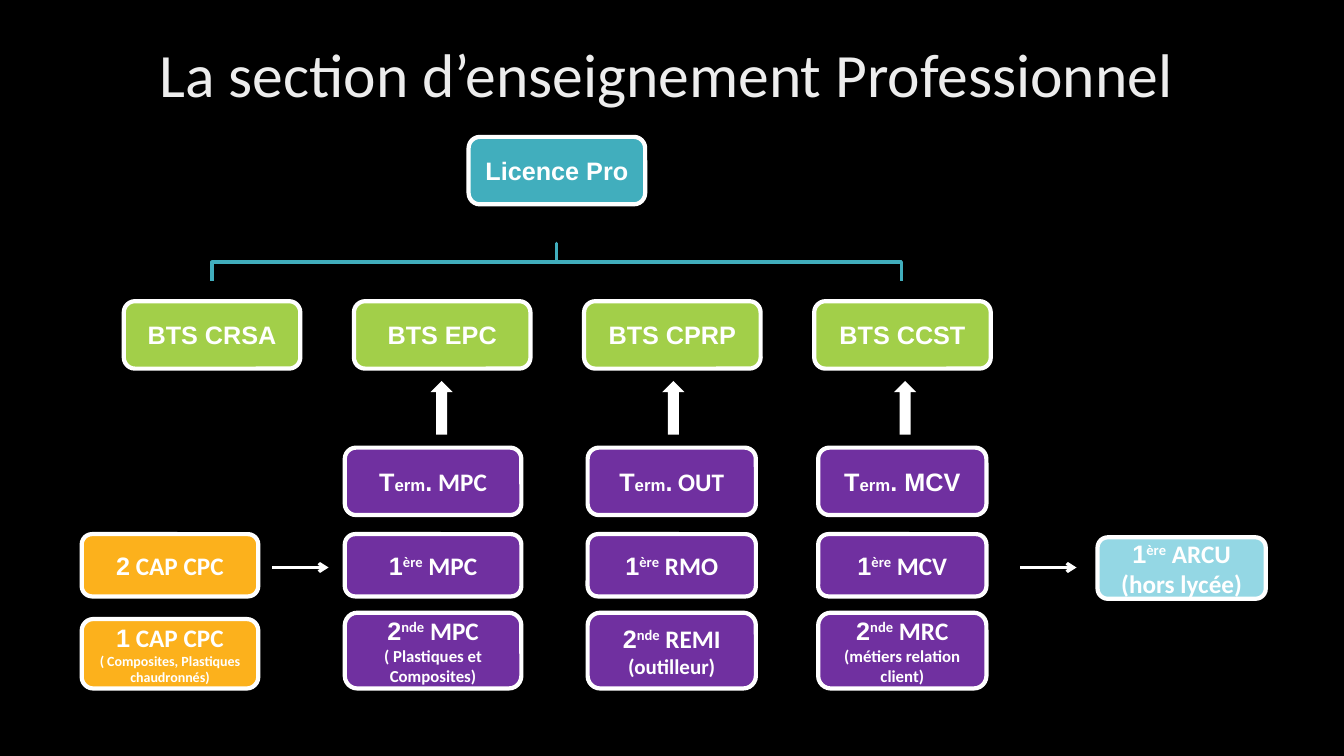
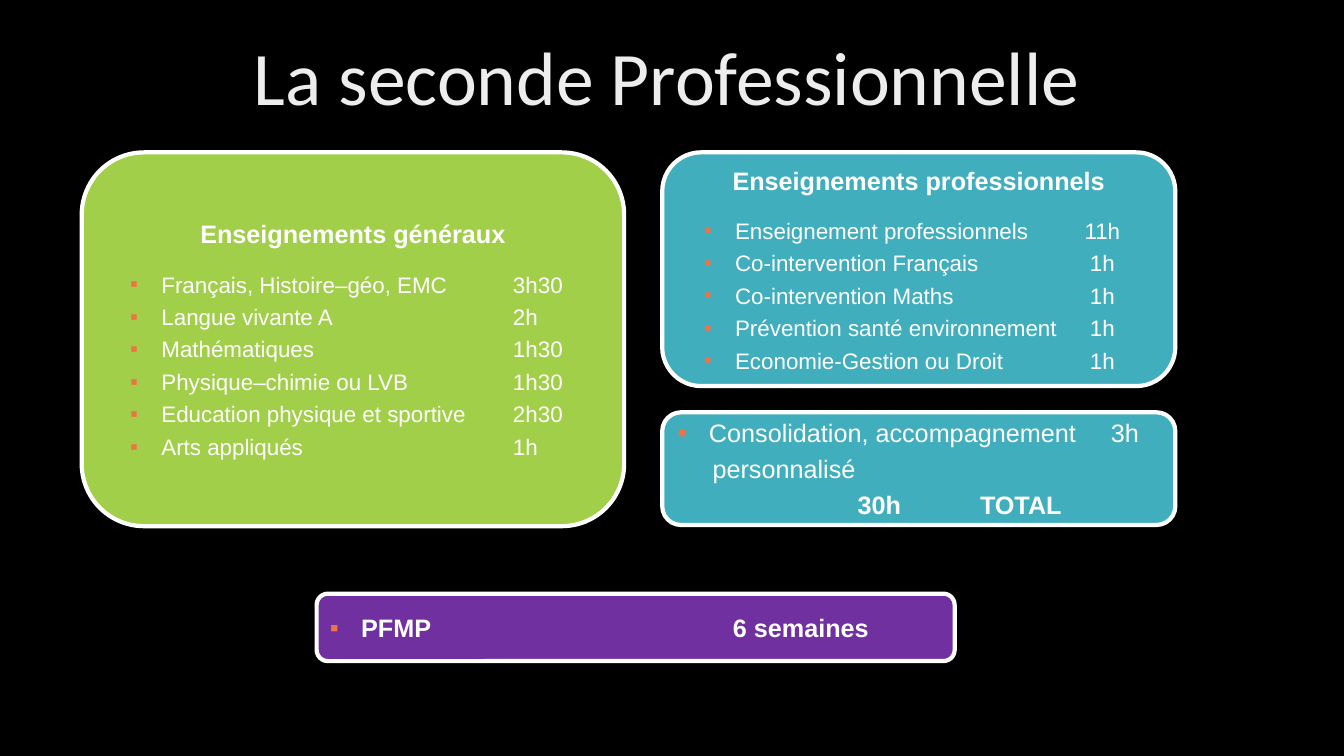
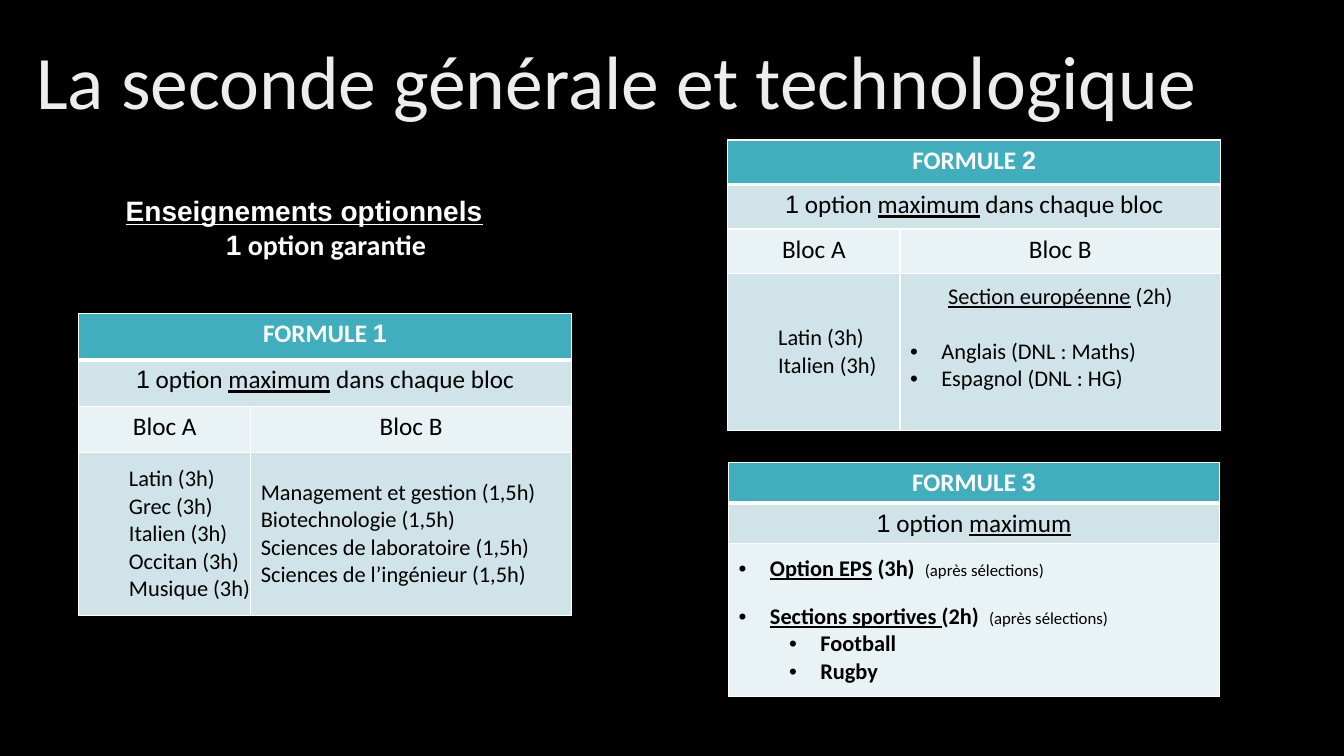
import pptx
import pptx.util
import pptx.dml.color
import pptx.enum.shapes
import pptx.enum.text
import pptx.oxml.ns
from lxml import etree

Cm, Pt = pptx.util.Cm, pptx.util.Pt
SHAPE = pptx.enum.shapes.MSO_SHAPE
ALIGN = pptx.enum.text.PP_ALIGN
MIDDLE = pptx.enum.text.MSO_ANCHOR.MIDDLE

INK = {
    "night": "000000", "white": "FFFFFF", "mist": "EDEDED",
    "violet": "7030A0", "amber": "FCB11C", "lime": "A2CF49",
    "teal": "41AEBD", "sky": "94D7E4", "coral": "EE7444",
    "band": "CFE3E8", "pale": "E9F2F4",
}
CAL = {"name": "Calibri"}
ARIAL = {"name": "Arial"}
SUPER = {"name": "Calibri", "base": "30000"}
SMALL = {"size": 12}
LINED = {"underline": True}
TITLE = {"name": "Calibri", "size": 54, "color": "mist"}
NODE = {"name": "Arial", "size": 18, "bold": True, "color": "white"}
HEAD = {"name": "Calibri", "size": 18, "bold": True, "color": "white"}
BODY = {"name": "Calibri", "size": 18, "bold": False, "color": "night"}
CELL = {**BODY, "size": 16}
TAB = 10.16


def tint(name):
    return pptx.dml.color.RGBColor.from_string(INK[name])


def add(root, tag, **attrs):
    return etree.SubElement(root, pptx.oxml.ns.qn("a:" + tag), attrs)


def place(box):
    return [Cm(side) for side in box]


def shift(box, x, y, w, h):
    return box[0] + x, box[1] + y, w, h


def para(*runs, **form):
    return runs, form


def dress(run, form):
    for key, value in form.items():
        if key == "color":
            run.font.color.rgb = tint(value)
        elif key == "base":
            run._r.get_or_add_rPr().set("baseline", value)
        else:
            setattr(run.font, key, Pt(value) if key == "size" else value)


def layout(item, align="left", left=0, hang=0, before=0, line=None,
           mark=None, hue=None, tab=None, snap="l"):
    props = item._p.get_or_add_pPr()
    props.set("marL", str(Cm(left)))
    props.set("indent", str(-Cm(hang)))
    if mark:
        if hue:
            add(add(props, "buClr"), "srgbClr", val=INK[hue])
        add(props, "buFont", typeface="Arial")
        add(props, "buChar", char=mark)
    if tab:
        add(add(props, "tabLst"), "tab", pos=str(Cm(tab)), algn=snap)
    values = {"alignment": getattr(ALIGN, align.upper()),
              "space_before": Pt(before), "line_spacing": line}
    for key, value in values.items():
        setattr(item, key, value)


def write(frame, paras, base):
    frame.word_wrap = True
    for i, (runs, form) in enumerate(paras):
        item = frame.add_paragraph() if i else frame.paragraphs[0]
        layout(item, **form)
        for run in runs:
            text, style = (run, {}) if isinstance(run, str) else run
            piece = item.add_run()
            piece.text = text
            dress(piece, {**base, **style})


def label(slide, box, paras, base):
    write(slide.shapes.add_textbox(*place(box)).text_frame, paras, base)


def title(slide, box, text, size=54, align="center"):
    label(slide, box, [para(text, align=align, line=0.9)], {**TITLE, "size": size})


def form(slide, kind, box, fill=None, edge=None, width=3):
    shape = slide.shapes.add_shape(kind, *place(box))
    shape.shadow.inherit = False
    if fill:
        shape.fill.solid()
        shape.fill.fore_color.rgb = tint(fill)
    else:
        shape.fill.background()
    if edge:
        shape.line.color.rgb = tint(edge)
        shape.line.width = Pt(width)
    else:
        shape.line.fill.background()
    return shape


def panel(slide, box, fill, paras, base=NODE):
    shape = form(slide, SHAPE.FLOWCHART_ALTERNATE_PROCESS, box, fill, "white")
    shape.text_frame.vertical_anchor = MIDDLE
    write(shape.text_frame, paras, base)


def node(slide, box, fill, *lines):
    panel(slide, box, fill, [para(*line, align="center") for line in lines])


def arrow(slide, x, y, size):
    line = slide.shapes.add_connector(
        pptx.enum.shapes.MSO_CONNECTOR.STRAIGHT, Cm(x), Cm(y), Cm(x + size), Cm(y))
    line.line.color.rgb = tint("white")
    line.line.width = Pt(2.25)
    add(line.line._get_or_add_ln(), "tailEnd", type="arrow")
    add(line._element.spPr, "effectLst")


def track(slide, box, term, first, second):
    x, y, w, h = box
    rows = [(0, 1.7, term), (2.18, 1.57, first), (4.16, 1.91, second)]
    for top, high, lines in rows:
        node(slide, shift(box, 0, top, w, high), "violet", *lines)


def summit(slide, box):
    node(slide, shift(box, 8.69, 0, 4.45, 1.7), "teal", ["Licence Pro"])
    brace = form(slide, SHAPE.RIGHT_BRACE, shift(box, 10.44, -5.53, 0.94, 17.37),
                 edge="teal", width=2.5)
    brace.adjustments[0] = 0
    brace.adjustments[1] = 0.5
    brace.rotation = 270
    for i, name in enumerate(["CRSA", "EPC", "CPRP", "CCST"]):
        node(slide, shift(box, 5.8 * i, 4.14, 4.45, 1.7), "lime", ["BTS " + name])
        if i:
            form(slide, SHAPE.UP_ARROW,
                 shift(box, 1.89 + 5.84 * i, 6.15, 0.56, 1.35), "white")


def base(slide, box):
    term = ["T", ("erm", SMALL), "."]
    first, second = ["1", ("ère", SUPER)], ["2", ("nde", SUPER)]
    tracks = [
        (6.63, 4.45, (" MPC", CAL), " MPC", " MPC", "( Plastiques et Composites)", 12),
        (12.75, 4.24, (" OUT", CAL), " RMO", " REMI", "(outilleur)", 15),
        (18.56, 4.24, " MCV", " MCV", " MRC", "(métiers relation client)", 12),
    ]
    for x, w, last, mid, low, note, size in tracks:
        track(slide, shift(box, x, 0, w, 6.07),
              [term + [last]],
              [first + [(mid, CAL)]],
              [second + [(low, CAL)], [(note, {**CAL, "size": size})]])
    cap = (" CAP CPC", CAL)
    node(slide, shift(box, 0, 2.18, 4.45, 1.57), "amber", ["2", cap])
    node(slide, shift(box, 0, 4.32, 4.45, 1.75), "amber", ["1", cap],
         [("( Composites, Plastiques chaudronnés)", {**CAL, "size": 10})])
    node(slide, shift(box, 25.6, 2.26, 4.24, 1.55), "sky",
         first + [(" ARCU", CAL)], [("(hors lycée)", CAL)])
    for x in (4.8, 23.65):
        arrow(slide, box[0] + x, box[1] + 3.02, 1.42)


def course(slide, box, fill, head, items, tab=TAB, snap="l"):
    plain = {"size": 16, "bold": False}
    paras = [para(head, align="center")]
    for i, (name, hours) in enumerate(items):
        paras.append(para((name + "\t" + hours, plain), left=1.3, hang=0.79,
                          before=4 if i else 15.5, mark="▪", hue="coral",
                          tab=tab, snap=snap))
    panel(slide, box, fill, paras)


def total(slide, box):
    plain = {"bold": False}
    panel(slide, box, "teal", [
        para(("Consolidation, accompagnement\t3h", plain), left=0.79, hang=0.79,
             mark="▪", hue="coral", tab=10.92),
        para(("personnalisé", plain), left=0.88, before=4.3),
        para("TOTAL\t30h", left=7.62, before=4.3, tab=TAB)])


def frame(cell, top, low):
    props = cell._tc.get_or_add_tcPr()
    for side, width in zip("LRTB", (1, 1, top, low)):
        edge = add(props, "ln" + side, w=str(Pt(width)))
        add(add(edge, "solidFill"), "srgbClr", val=INK["white"])


def grid(slide, box, cols, rows, cells):
    table = slide.shapes.add_table(len(rows), len(cols), *place(box)).table
    table.first_row = table.horz_banding = False
    for col, size in zip(table.columns, cols):
        col.width = Cm(size)
    for r, (high, fill, line) in enumerate(zip(rows, ["teal", "band", "pale", "band"], cells)):
        table.rows[r].height = Cm(high)
        for c in range(len(cols)):
            cell = table.cell(r, c)
            frame(cell, 3 if r == 1 else 1, 1 if r else 3)
            cell.fill.solid()
            cell.fill.fore_color.rgb = tint(fill)
        for c, (paras, style, extra) in enumerate(line):
            cell = table.cell(r, c)
            for key, value in extra.items():
                setattr(cell, key, value)
            write(cell.text_frame, paras, style)
        if len(line) < len(cols):
            table.cell(r, 0).merge(table.cell(r, len(cols) - 1))


def heads(number, tail):
    rule = para(("1", ARIAL), " option ", ("maximum", LINED), *tail, align="center")
    return [[([para("FORMULE ", (number, ARIAL), align="center")], HEAD, {})],
            [([rule], BODY, {})]]


def blocs(slide, box, number, high, left, right, pad=0.13):
    names = [([para("Bloc " + name, align="center")], BODY, {}) for name in "AB"]
    tight = {"vertical_anchor": MIDDLE, "margin_left": 0, "margin_right": 0}
    loose = {"vertical_anchor": MIDDLE, "margin_bottom": Cm(pad)}
    last = [([para(name + " (3h)", left=1.27) for name in left], CELL, tight),
            (right, CELL, loose)]
    grid(slide, box, [4.34, 8.08], [high] * 3 + [box[3] - 3 * high],
         heads(number, [" dans chaque bloc"]) + [names, last])


def sports(slide, box):
    strong, note = {"bold": True}, ("(après sélections)", SMALL)
    paras = [para((name, {**strong, **LINED}), (hours, strong), note,
                  left=0.79, hang=0.79, before=before, mark="•")
             for name, hours, before in [("Option EPS", " (3h)  ", 0),
                                         ("Sections sportives ", "(2h)  ", 14.65)]]
    paras += [para((name, strong), left=2.06, hang=0.79, mark="•")
              for name in ("Football", "Rugby")]
    grid(slide, box, [box[2]], [1.02, 1.02, box[3] - 2.04],
         heads("3", []) + [[(paras, CELL, {"vertical_anchor": MIDDLE})]])


def main():
    deck = pptx.Presentation()
    deck.slide_width, deck.slide_height = Cm(33.87), Cm(19.05)
    slides = []
    for _ in range(3):
        slide = deck.slides.add_slide(deck.slide_layouts[6])
        slide.background.fill.solid()
        slide.background.fill.fore_color.rgb = tint("night")
        slides.append(slide)
    paths, second, general = slides

    title(paths, (0.66, 0.99, 32.28, 2.54), "La section d’enseignement Professionnel", 44)
    summit(paths, (3.12, 3.45, 21.85, 7.5))
    base(paths, (2.06, 11.28, 29.84, 6.07))

    title(second, (0.66, 0.89, 32.28, 2.54), "La seconde Professionnelle")
    course(second, (2.06, 3.84, 13.67, 9.42), "lime", "Enseignements généraux", [
        ("Français, Histoire–géo, EMC", "3h30"),
        ("Langue vivante A", "2h"),
        ("Mathématiques", "1h30"),
        ("Physique–chimie ou LVB", "1h30"),
        ("Education physique et sportive", "2h30"),
        ("Arts appliqués", "1h")])
    course(second, (16.69, 3.84, 12.93, 5.89), "teal", "Enseignements professionnels", [
        ("Enseignement professionnels", "11h"),
        ("Co-intervention Français", "1h"),
        ("Co-intervention Maths", "1h"),
        ("Prévention santé environnement", "1h"),
        ("Economie-Gestion ou Droit", "1h")], 10.62, "ctr")
    total(second, (16.69, 10.39, 12.93, 2.84))
    panel(second, (7.98, 14.96, 16.08, 1.7), "violet", [
        para("PFMP\t6 semaines", left=0.79, hang=0.79, mark="▪", hue="coral", tab=TAB)])

    title(general, (0.66, 0.99, 32.28, 2.54), "La seconde générale et technologique", align="left")
    label(general, (2.92, 4.75, 10.59, 1.96), [
        para(("Enseignements optionnels", LINED)),
        para("1", (" option garantie", CAL), align="center")], {**NODE, "size": 20})
    blocs(general, (1.98, 7.9, 12.42, 7.6), "1", 1.17,
          ["Latin", "Grec", "Italien", "Occitan", "Musique"],
          [para(name + " (1,5h)") for name in (
              "Management et gestion", "Biotechnologie",
              "Sciences de laboratoire", "Sciences de l’ingénieur")])
    blocs(general, (18.34, 3.53, 12.42, 7.32), "2", 1.12, ["Latin", "Italien"], [
        para(("Section européenne", LINED), " (2h)", align="center"),
        para("Anglais (DNL : Maths)", left=0.79, hang=0.79, before=19.5, mark="•"),
        para("Espagnol (DNL : HG)", left=0.79, hang=0.79, mark="•")], 0.82)
    sports(general, (18.36, 11.66, 12.37, 5.9))
    deck.save("out.pptx")


if __name__ == "__main__":
    main()
